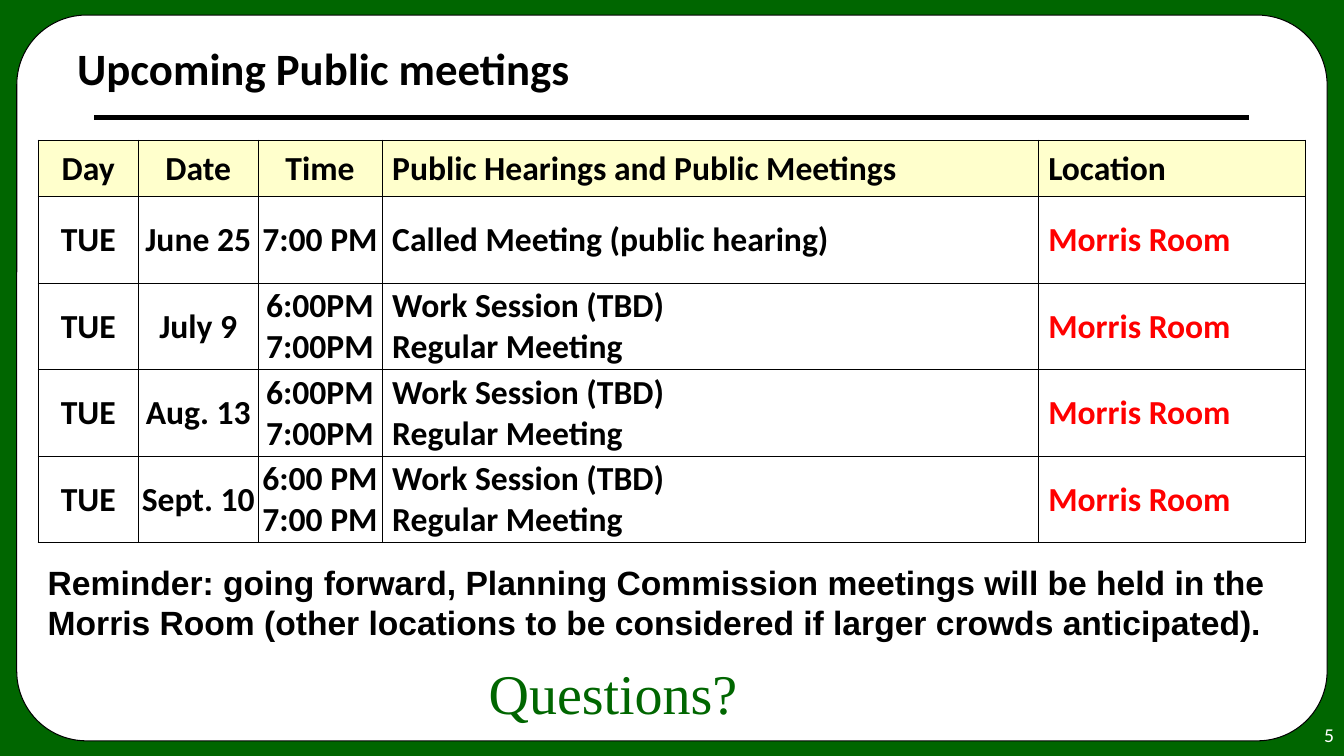
from dataclasses import dataclass

import lxml.etree
import pptx
import pptx.dml.color
import pptx.enum.shapes
import pptx.enum.text
import pptx.oxml.ns
import pptx.util

RGBColor = pptx.dml.color.RGBColor
Align = pptx.enum.text.PP_ALIGN
Anchor = pptx.enum.text.MSO_ANCHOR
Shape = pptx.enum.shapes.MSO_SHAPE

BLACK = RGBColor(0x00, 0x00, 0x00)
WHITE = RGBColor(0xFF, 0xFF, 0xFF)
GREEN = RGBColor(0x00, 0x66, 0x00)
RED = RGBColor(0xFF, 0x00, 0x00)
CREAM = RGBColor(0xFF, 0xFF, 0xCC)

GRID_COLUMNS, GRID_ROWS = 160, 90
CELL = pptx.util.Inches(1) / 12


def grid(count: float) -> int:
    return round(count * CELL)


@dataclass(frozen=True)
class Area:
    column: float
    row: float
    columns: float
    rows: float

    def lengths(self) -> tuple[int, int, int, int]:
        return grid(self.column), grid(self.row), grid(self.columns), grid(self.rows)


@dataclass(frozen=True)
class Style:
    font: str
    size: float
    color: RGBColor = BLACK
    bold: bool = False
    align: Align = Align.LEFT


@dataclass(frozen=True)
class Label:
    text: str
    area: Area
    style: Style
    anchor: Anchor = Anchor.TOP
    wrap: bool = True


@dataclass(frozen=True)
class Panel:
    shape: Shape
    area: Area
    adjustment: float
    fill: RGBColor
    outlined: bool


@dataclass(frozen=True)
class Column:
    heading: str
    width: float
    color: RGBColor = BLACK
    align: Align = Align.CENTER
    margin: float = 0.01


PANELS = [
    Panel(Shape.FRAME, Area(0, 0, GRID_COLUMNS, GRID_ROWS), 0.125, GREEN, False),
    Panel(Shape.ROUNDED_RECTANGLE, Area(2, 1.8, 156, 86.4), 0.096, WHITE, True),
]
LABELS = [
    Label("Upcoming Public meetings", Area(8, 3, 141, 10),
          Style("Calibri", 32, bold=True), Anchor.MIDDLE),
    Label("5", Area(152, 85.5, 8, 4), Style("Calibri", 14, WHITE, align=Align.RIGHT)),
    Label("Questions?", Area(57, 77.75, 34, 9.25),
          Style("Times New Roman", 40, GREEN), wrap=False),
    Label("Reminder: going forward, Planning Commission meetings will be held in the "
          "Morris Room (other locations to be considered if larger crowds anticipated).",
          Area(4.5, 66.25, 151, 10.9), Style("Arial", 24, bold=True)),
]
COLUMNS = [
    Column("Day", 12),
    Column("Date", 14.2),
    Column("Time", 14.8),
    Column("Public Hearings and Public Meetings", 78.1, align=Align.LEFT, margin=0.1),
    Column("Location", 31.8, RED, Align.LEFT, 0.1),
]
SESSIONS = "Work Session (TBD)\nRegular Meeting"
MEETINGS = [
    ("June 25", "7:00 PM", "Called Meeting (public hearing)"),
    ("July 9", "6:00PM\n7:00PM", SESSIONS),
    ("Aug. 13", "6:00PM\n7:00PM", SESSIONS),
    ("Sept. 10", "6:00 PM\n7:00 PM", SESSIONS),
]
HEADING_ROWS, MEETING_ROWS = 6.75, 10.3


def write_text(frame, text: str, style: Style) -> None:
    for index, line in enumerate(text.split("\n")):
        para = frame.add_paragraph() if index else frame.paragraphs[0]
        para.alignment = style.align
        span = para.add_run()
        span.text = line
        span.font.name = style.font
        span.font.size = pptx.util.Pt(style.size)
        span.font.bold = style.bold
        span.font.color.rgb = style.color


def draw_panel(page, panel: Panel) -> None:
    shape = page.shapes.add_shape(panel.shape, *panel.area.lengths())
    shape.shadow.inherit = False
    shape.adjustments[0] = panel.adjustment
    shape.fill.solid()
    shape.fill.fore_color.rgb = panel.fill
    if panel.outlined:
        shape.line.color.rgb = BLACK
        shape.line.width = pptx.util.Pt(0.75)
    else:
        shape.line.fill.background()


def draw_label(page, label: Label) -> None:
    box = page.shapes.add_textbox(*label.area.lengths())
    box.text_frame.word_wrap = label.wrap
    box.text_frame.vertical_anchor = label.anchor
    write_text(box.text_frame, label.text, label.style)


def draw_title_rule(page) -> None:
    rule = page.shapes.add_connector(
        pptx.enum.shapes.MSO_CONNECTOR.STRAIGHT,
        grid(11.25), grid(14), grid(148.7), grid(14))
    rule.line.color.rgb = BLACK
    rule.line.width = pptx.util.Pt(3)
    properties = rule._element.spPr
    lxml.etree.SubElement(properties, pptx.oxml.ns.qn("a:effectLst"))


def add_borders(cell) -> None:
    properties = cell._tc.get_or_add_tcPr()
    for side in ("a:lnL", "a:lnR", "a:lnT", "a:lnB"):
        border = lxml.etree.SubElement(properties, pptx.oxml.ns.qn(side))
        border.set("w", str(pptx.util.Pt(0.5)))
        fill = lxml.etree.SubElement(border, pptx.oxml.ns.qn("a:solidFill"))
        color = lxml.etree.SubElement(fill, pptx.oxml.ns.qn("a:srgbClr"))
        color.set("val", str(BLACK))


def fill_cell(cell, text: str, column: Column, is_heading: bool) -> None:
    add_borders(cell)
    cell.fill.solid()
    cell.fill.fore_color.rgb = CREAM if is_heading else WHITE
    cell.vertical_anchor = Anchor.MIDDLE
    cell.margin_left = pptx.util.Inches(column.margin)
    cell.margin_right = cell.margin_top = pptx.util.Inches(0.01)
    cell.margin_bottom = 0
    color = BLACK if is_heading else column.color
    write_text(cell.text_frame, text, Style("Calibri", 24, color, True, column.align))


def draw_schedule(page) -> None:
    lines = [tuple(column.heading for column in COLUMNS)]
    lines += [("TUE", *meeting, "Morris Room") for meeting in MEETINGS]
    heights = [HEADING_ROWS] + [MEETING_ROWS] * len(MEETINGS)
    area = Area(4.5, 16.65, sum(column.width for column in COLUMNS), sum(heights))
    table = page.shapes.add_table(len(lines), len(COLUMNS), *area.lengths()).table
    table.first_row = table.horz_banding = False
    for index, column in enumerate(COLUMNS):
        table.columns[index].width = grid(column.width)
    for row, (line, height) in enumerate(zip(lines, heights)):
        table.rows[row].height = grid(height)
        for index, (text, column) in enumerate(zip(line, COLUMNS)):
            fill_cell(table.cell(row, index), text, column, row == 0)


def main() -> None:
    deck = pptx.Presentation()
    deck.slide_width, deck.slide_height = grid(GRID_COLUMNS), grid(GRID_ROWS)
    page = deck.slides.add_slide(deck.slide_layouts[6])
    for panel in PANELS:
        draw_panel(page, panel)
    draw_title_rule(page)
    draw_schedule(page)
    for label in LABELS:
        draw_label(page, label)
    deck.save("out.pptx")


if __name__ == "__main__":
    main()
